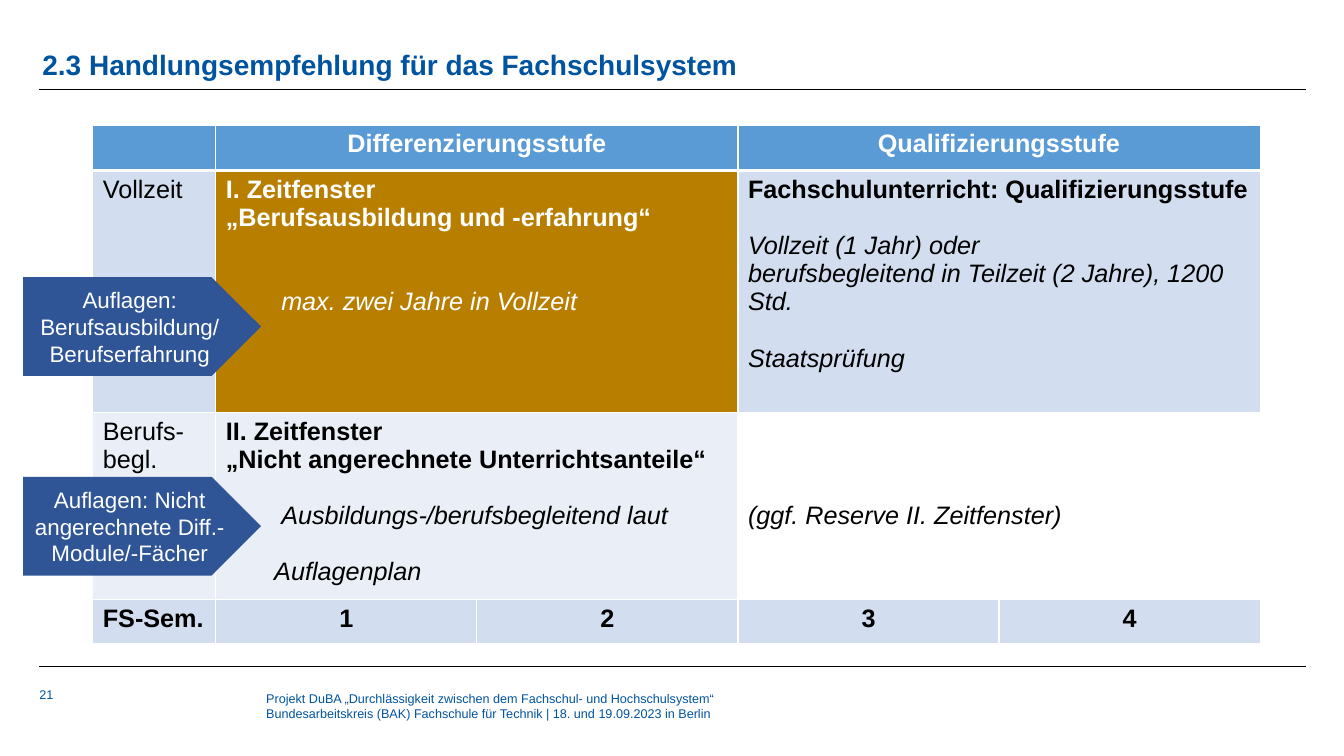
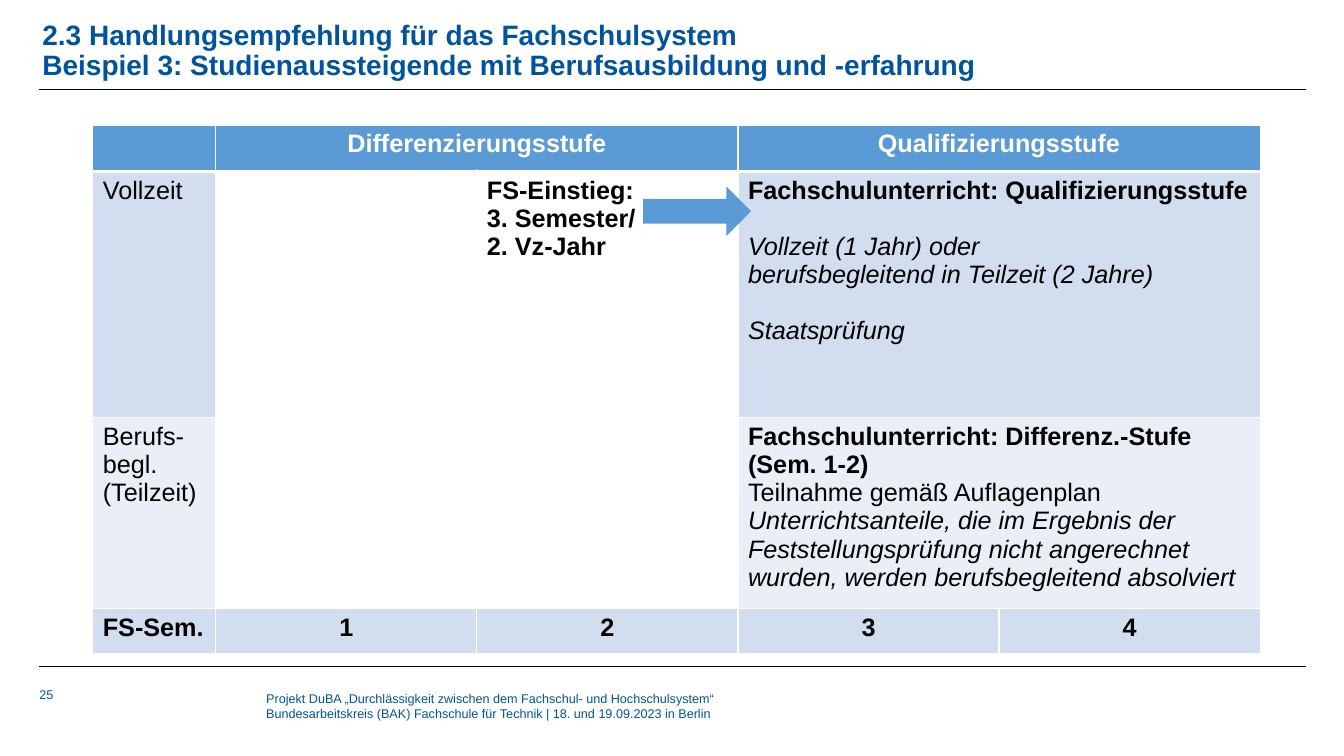
from collections import namedtuple

from lxml.etree import SubElement
from pptx import Presentation
from pptx.dml.color import RGBColor
from pptx.enum.shapes import MSO_CONNECTOR as Connector, MSO_SHAPE as Shape
from pptx.enum.text import MSO_ANCHOR as Anchor, PP_ALIGN as Align
from pptx.oxml.ns import qn
from pptx.util import Inches, Pt

Line = namedtuple("Line", "text bold italic gap indent color align",
                  defaults=(False, False, 0, 0, "000000", Align.LEFT))

FOOTER = ("Projekt DuBA „Durchlässigkeit zwischen dem Fachschul- und Hochschulsystem“ "
          "Bundesarbeitskreis (BAK) Fachschule für Technik | 18. und 19.09.2023 in Berlin")
TITLE = "2.3 Handlungsempfehlung für das Fachschulsystem"
BLANK_LINE = 20


def rgb(code):
    """Turn a hex string into a colour."""
    return RGBColor.from_string(code)


class StageDeck:
    """Holds the shared style, the deck and the current slide."""

    FONT = "Arial"
    BRAND = "00549F"
    HEADER = "5B9BD5"
    BAND = "D2DEEF"
    PALE = "EAEFF7"
    FLAG = "2F5597"
    WINDOW = "B87E00"
    WHITE = "FFFFFF"

    def __init__(self):
        """Open an empty widescreen deck."""
        self.deck = Presentation()
        self.deck.slide_width = Inches(13.33)
        self.deck.slide_height = Inches(7.5)
        self.slide = None
        self.table = None

    def page(self, number, title):
        """Start a slide with its title, rules and footer."""
        self.slide = self.deck.slides.add_slide(self.deck.slide_layouts[6])
        self.label(2.64, 6.85, 4.49, 0.61, FOOTER, 9)
        self.rule(0.89)
        self.rule(6.61)
        self.label(0.39, 6.81, 0.8, 0.43, str(number), 9)
        frame = self.label(0.42, 0.22, 12.56, 0.59, title, 20, True)
        frame.vertical_anchor = Anchor.BOTTOM
        frame.paragraphs[0].line_spacing = 0.9

    def set_lines(self, frame, lines, size):
        """Fill a text frame with formatted paragraphs."""
        frame.word_wrap = True
        for index, line in enumerate(lines):
            para = frame.add_paragraph() if index else frame.paragraphs[0]
            para.text = line.text
            para.alignment = line.align
            if line.gap:
                para.space_before = Pt(line.gap)
            if line.indent:
                para._p.get_or_add_pPr().set("marL", str(Inches(line.indent)))
            for span in para.runs:
                span.font.name = self.FONT
                span.font.size = Pt(size)
                span.font.bold = line.bold
                span.font.italic = line.italic
                span.font.color.rgb = rgb(line.color)

    def label(self, left, top, width, height, text, size, bold=False):
        """Add a text box without insets in the brand colour."""
        box = self.slide.shapes.add_textbox(
            Inches(left), Inches(top), Inches(width), Inches(height))
        frame = box.text_frame
        frame.margin_left = frame.margin_right = 0
        frame.margin_top = frame.margin_bottom = 0
        self.set_lines(frame, [Line(text, bold=bold, color=self.BRAND)], size)
        return frame

    def rule(self, top):
        """Draw a thin line across the slide."""
        line = self.slide.shapes.add_connector(
            Connector.STRAIGHT, Inches(0.39), Inches(top), Inches(12.95), Inches(top))
        line.line.color.rgb = rgb("000000")
        line.line.width = Pt(0.5)
        SubElement(line._element.spPr, qn("a:effectLst"))

    def arrow(self, kind, left, top, width, height, fill, text=""):
        """Add a filled arrow shape with optional centred text."""
        shape = self.slide.shapes.add_shape(
            kind, Inches(left), Inches(top), Inches(width), Inches(height))
        shape.shadow.inherit = False
        shape.fill.solid()
        shape.fill.fore_color.rgb = rgb(fill)
        shape.line.fill.background()
        if text:
            shape.text_frame.vertical_anchor = Anchor.MIDDLE
            self.set_lines(shape.text_frame,
                           [Line(text, color=self.WHITE, align=Align.CENTER)], 16)

    def flag(self, top, text):
        """Add a requirement flag at the left edge."""
        self.arrow(Shape.PENTAGON, 0.23, top, 2.36, 0.98, self.FLAG, text)

    def border(self, cell, row):
        """Give a cell white borders, thick below the header row."""
        properties = cell._tc.get_or_add_tcPr()
        thick = {0: "lnB", 1: "lnT"}.get(row)
        for side in ("lnL", "lnR", "lnT", "lnB"):
            width = Pt(3 if side == thick else 1)
            edge = SubElement(properties, qn("a:" + side), w=str(width))
            paint = SubElement(edge, qn("a:solidFill"))
            SubElement(paint, qn("a:srgbClr"), val=self.WHITE)

    def cell(self, row, column, fill, *lines, rows=1, columns=1, top=0.05):
        """Fill one table cell, merged over the given rows and columns."""
        cell = self.table.cell(row, column)
        if rows * columns > 1:
            cell.merge(self.table.cell(row + rows - 1, column + columns - 1))
        if fill:
            cell.fill.solid()
            cell.fill.fore_color.rgb = rgb(fill)
        cell.margin_top = Inches(top)
        self.set_lines(cell.text_frame, lines, 18)

    def stage_table(self, heights):
        """Add the stage table with headers, row labels and semesters."""
        widths = [1.22] + [2.59] * 4
        frame = self.slide.shapes.add_table(
            len(heights), len(widths), Inches(0.92), Inches(1.24),
            Inches(sum(widths)), Inches(sum(heights)))
        self.table = frame.table
        self.table.first_row = self.table.horz_banding = False
        for column, width in zip(self.table.columns, widths):
            column.width = Inches(width)
        for index, (row, height) in enumerate(zip(self.table.rows, heights)):
            row.height = Inches(height)
            for cell in row.cells:
                self.border(cell, index)
                cell.fill.background()
        self.cell(0, 0, self.HEADER)
        for column, stage in ((1, "Differenzierungsstufe"), (3, "Qualifizierungsstufe")):
            heading = Line(stage, bold=True, color=self.WHITE, align=Align.CENTER)
            self.cell(0, column, self.HEADER, heading, columns=2)
        self.cell(1, 0, self.BAND, Line("Vollzeit"))
        self.cell(2, 0, self.PALE, Line("Berufs-begl.\v(Teilzeit)"))
        self.cell(3, 0, self.BAND, Line("FS-Sem.", bold=True))
        for semester in range(1, 5):
            self.cell(3, semester, self.BAND,
                      Line(str(semester), bold=True, align=Align.CENTER))

    def qualification(self, duration):
        """Fill the full-time cell of the qualification stage."""
        self.cell(1, 3, self.BAND,
                  Line("Fachschulunterricht: Qualifizierungsstufe", bold=True),
                  Line("Vollzeit (1 Jahr) oder\v" + duration,
                       italic=True, gap=BLANK_LINE),
                  Line("Staatsprüfung", italic=True, gap=BLANK_LINE), columns=2)


def recommendation(deck):
    """Build the slide with the general recommendation."""
    deck.page(21, TITLE)
    deck.stage_table([0.45, 2.4, 1.78, 0.44])
    deck.cell(1, 1, deck.WINDOW,
              Line("I. Zeitfenster\v„Berufsausbildung und -erfahrung“",
                   bold=True, color=deck.WHITE),
              Line("max. zwei Jahre in Vollzeit", italic=True, gap=2 * BLANK_LINE,
                   indent=0.55, color=deck.WHITE), columns=2)
    deck.qualification("berufsbegleitend in Teilzeit (2 Jahre), 1200 Std.")
    deck.cell(2, 1, deck.PALE,
              Line("II. Zeitfenster\v„Nicht angerechnete Unterrichtsanteile“", bold=True),
              Line("Ausbildungs-/berufsbegleitend laut", italic=True,
                   gap=BLANK_LINE, indent=0.55),
              Line("Auflagenplan", italic=True, gap=BLANK_LINE, indent=0.48), columns=2)
    deck.cell(2, 3, None, Line("(ggf. Reserve II. Zeitfenster)", italic=True),
              columns=2, top=0.89)
    deck.flag(4.73, "Auflagen: Nicht angerechnete Diff.-Module/-Fächer")
    deck.flag(2.75, "Auflagen: Berufsausbildung/ Berufserfahrung")


def example(deck):
    """Build the slide with the third example."""
    deck.page(25, TITLE + "\vBeispiel 3: Studienaussteigende mit "
                          "Berufsausbildung und -erfahrung")
    deck.stage_table([0.46, 2.44, 1.81, 0.44])
    deck.cell(1, 1, None, rows=2)
    deck.cell(1, 2, None, Line("FS-Einstieg:\v3. Semester/\v2. Vz-Jahr", bold=True))
    deck.qualification("berufsbegleitend in Teilzeit (2 Jahre)")
    deck.cell(2, 3, deck.PALE,
              Line("Fachschulunterricht: Differenz.-Stufe (Sem. 1-2)", bold=True),
              Line("Teilnahme gemäß Auflagenplan"),
              Line("Unterrichtsanteile, die im Ergebnis der Feststellungsprüfung nicht "
                   "angerechnet wurden, werden berufsbegleitend absolviert", italic=True),
              columns=2)
    deck.arrow(Shape.RIGHT_ARROW, 6.38, 1.85, 1.07, 0.49, deck.HEADER)


def main():
    """Build and save the deck."""
    stages = StageDeck()
    recommendation(stages)
    example(stages)
    stages.deck.save("out.pptx")


if __name__ == "__main__":
    main()
